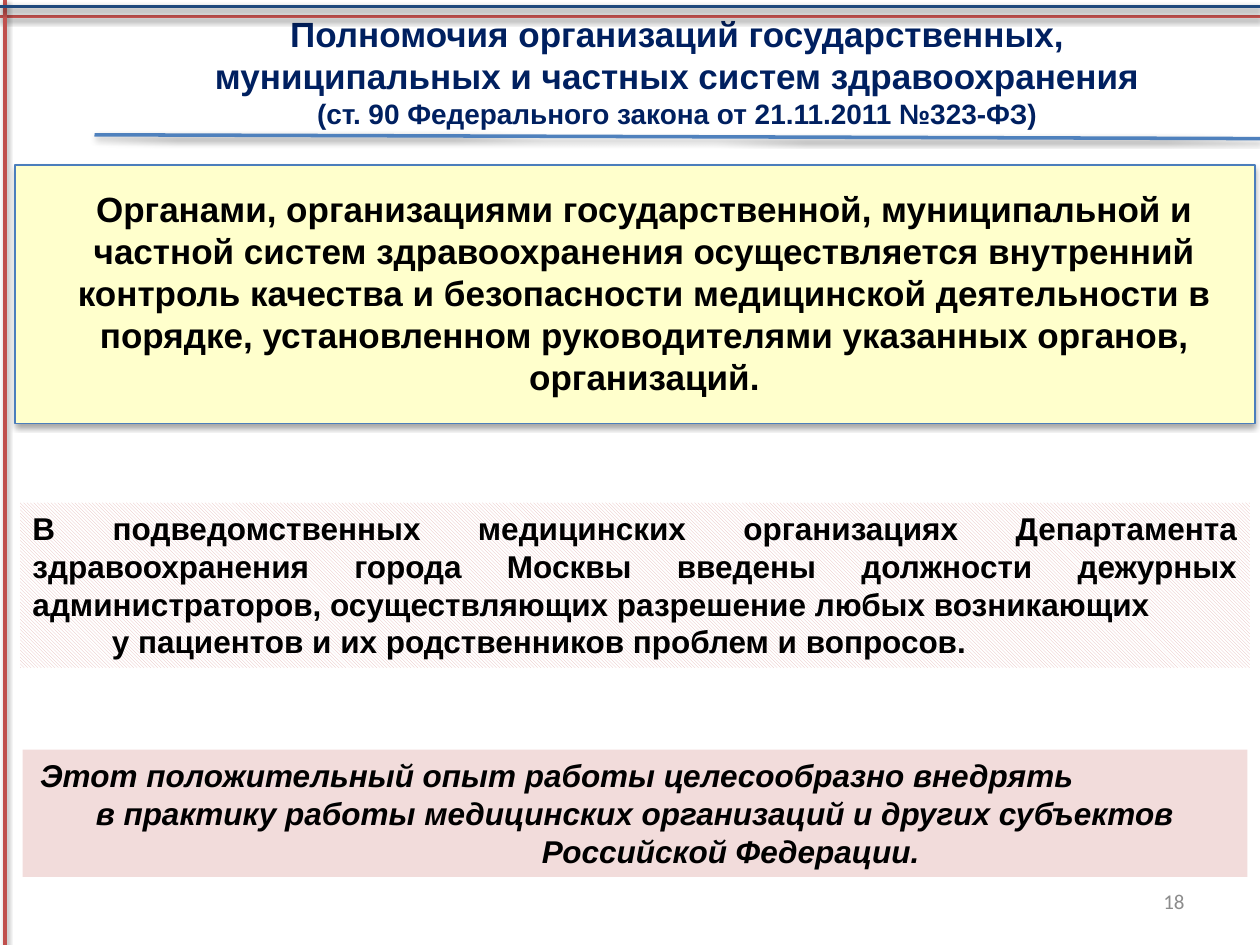
from dataclasses import dataclass

import pptx
import pptx.dml.color
import pptx.enum.dml
import pptx.enum.shapes
import pptx.enum.text
import pptx.oxml
import pptx.oxml.ns
import pptx.util
from lxml import etree

COLUMNS, ROWS = 100, 75
CELL = pptx.util.Inches(0.1)
ALIGN = pptx.enum.text.PP_ALIGN
ANCHOR = pptx.enum.text.MSO_ANCHOR
RECTANGLE = pptx.enum.shapes.MSO_SHAPE.RECTANGLE
STRAIGHT = pptx.enum.shapes.MSO_CONNECTOR.STRAIGHT


@dataclass(frozen=True)
class Theme:
    font: str = "Arial"
    number_font: str = "Calibri"
    heading: int = 20
    body: int = 18
    reference: int = 16
    number: int = 12
    navy: str = "002060"
    black: str = "000000"
    gray: str = "8C8C8C"
    red_line: str = "C0504D"
    dark_line: str = "1F497D"
    blue_line: str = "4F81BD"
    panel_line: str = "4B7EBC"
    panel: str = "FFFFCC"
    hatch: str = "E6B9B8"
    white: str = "FFFFFF"
    pink: str = "F2DCDB"


@dataclass(frozen=True)
class Box:
    """A region in columns and rows of the slide grid."""
    left: float
    top: float
    width: float
    height: float

    def inner(self, left, top, right, bottom):
        return Box(self.left + left, self.top + top,
                   self.width - left - right, self.height - top - bottom)

    def lengths(self):
        return [cells(v) for v in (self.left, self.top, self.width, self.height)]


THEME = Theme()


def cells(count):
    return round(count * CELL)


def rgb(value):
    return pptx.dml.color.RGBColor.from_string(value)


def add_shadow(shape, opacity, distance):
    properties = shape._element.spPr
    for old in properties.findall(pptx.oxml.ns.qn("a:effectLst")):
        properties.remove(old)
    properties.append(pptx.oxml.parse_xml(
        f'<a:effectLst {pptx.oxml.ns.nsdecls("a")}>'
        f'<a:outerShdw blurRad="{pptx.util.Pt(3.1)}" dist="{pptx.util.Pt(distance)}"'
        ' dir="5400000" rotWithShape="0"><a:srgbClr val="000000">'
        f'<a:alpha val="{opacity * 1000}"/></a:srgbClr></a:outerShdw></a:effectLst>'))


def add_rule(slide, start, end, color):
    rule = slide.shapes.add_connector(STRAIGHT, *map(cells, start + end))
    rule.line.color.rgb = rgb(color)
    rule.line.width = pptx.util.Pt(2)
    add_shadow(rule, 38, 1.6)


def add_rectangle(slide, box):
    shape = slide.shapes.add_shape(RECTANGLE, *box.lengths())
    shape.shadow.inherit = False
    shape.line.fill.background()
    return shape


def write(shape, paragraphs, anchor=ANCHOR.TOP, wrap=True, **font_format):
    """Each paragraph is (text, alignment, indent in columns, own font format)."""
    frame = shape.text_frame
    frame.word_wrap = wrap
    frame.vertical_anchor = anchor
    for index, (text, alignment, indent, own) in enumerate(paragraphs):
        paragraph = frame.paragraphs[0] if index == 0 else frame.add_paragraph()
        paragraph.alignment = alignment
        if indent:
            paragraph._p.get_or_add_pPr().set("marL", str(cells(indent)))
        run = paragraph.add_run()
        run.text = text
        values = {"name": THEME.font, "size": THEME.body, "bold": True,
                  "color": THEME.black, **font_format, **own}
        run.font.color.rgb = rgb(values.pop("color"))
        values["size"] = pptx.util.Pt(values["size"])
        for name, value in values.items():
            setattr(run.font, name, value)


def frame_rules(slide, box):
    right, bottom = box.left + box.width, box.top + box.height
    add_rule(slide, (right, 1.3), (box.left, 1.3), THEME.red_line)
    add_rule(slide, (0.4, box.top), (0.4, bottom), THEME.red_line)
    add_rule(slide, (box.left, 0.5), (right, 0.5), THEME.dark_line)


def title(slide, box):
    placeholder = slide.shapes.title
    for name, value in zip(("left", "top", "width", "height"), box.lengths()):
        setattr(placeholder, name, value)
    write(placeholder, [
        ("Полномочия организаций государственных,", ALIGN.CENTER, 0, {}),
        ("муниципальных и частных систем здравоохранения", ALIGN.CENTER, 0, {}),
        ("(ст. 90 Федерального закона от 21.11.2011 №323-ФЗ)", ALIGN.CENTER, 0,
         {"size": THEME.reference}),
    ], wrap=False, size=THEME.heading, color=THEME.navy)
    add_rule(slide, (7.5, 10.7), (COLUMNS, 11), THEME.blue_line)


def control_panel(slide, box):
    panel = add_rectangle(slide, box)
    panel.fill.solid()
    panel.fill.fore_color.rgb = rgb(THEME.panel)
    panel.line.color.rgb = rgb(THEME.panel_line)
    panel.line.width = pptx.util.Pt(0.75)
    add_shadow(panel, 35, 1.8)
    label = slide.shapes.add_textbox(*box.inner(2.3, 1.3, 0.8, 1.4).lengths())
    write(label, [(
        "Органами, организациями государственной, муниципальной и частной систем "
        "здравоохранения осуществляется внутренний контроль качества и безопасности "
        "медицинской деятельности в порядке, установленном руководителями указанных "
        "органов, организаций.", ALIGN.CENTER, 0, {})], size=THEME.heading)


def administrators_note(slide, box):
    note = add_rectangle(slide, box)
    note.fill.patterned()
    note.fill.pattern = pptx.enum.dml.MSO_PATTERN.DARK_DOWNWARD_DIAGONAL
    note.fill.fore_color.rgb = rgb(THEME.hatch)
    note.fill.back_color.rgb = rgb(THEME.white)
    write(note, [
        ("В подведомственных медицинских организациях Департамента здравоохранения "
         "города Москвы введены должности дежурных администраторов, осуществляющих "
         "разрешение любых возникающих", ALIGN.JUSTIFY, 0, {}),
        ("у пациентов и их родственников проблем и вопросов.", ALIGN.JUSTIFY, 6.3, {}),
    ])


def conclusion(slide, box):
    note = add_rectangle(slide, box)
    note.fill.solid()
    note.fill.fore_color.rgb = rgb(THEME.pink)
    write(note, [
        ("Этот положительный опыт работы целесообразно внедрять", ALIGN.LEFT, 0.4, {}),
        ("в практику работы медицинских организаций и других субъектов",
         ALIGN.CENTER, 0, {}),
        ("Российской Федерации.", ALIGN.CENTER, 15.2, {}),
    ], italic=True)


def slide_number(slide, box):
    label = slide.shapes.add_textbox(*box.lengths())
    write(label, [("18", ALIGN.RIGHT, 0, {})], anchor=ANCHOR.MIDDLE, bold=False,
          name=THEME.number_font, size=THEME.number, color=THEME.gray)


def main():
    presentation = pptx.Presentation()
    presentation.slide_width = cells(COLUMNS)
    presentation.slide_height = cells(ROWS)
    slide = presentation.slides.add_slide(presentation.slide_layouts[5])
    frame_rules(slide, Box(0, 0, COLUMNS, ROWS))
    title(slide, Box(15.8, 0.5, 75.9, 10.8))
    control_panel(slide, Box(1.2, 13.1, 98.4, 20.5))
    administrators_note(slide, Box(1.6, 39.9, 97.6, 13.1))
    conclusion(slide, Box(1.8, 59.5, 97.2, 10.1))
    slide_number(slide, Box(71.7, 69.5, 23.3, 4))
    presentation.save("out.pptx")


if __name__ == "__main__":
    main()
